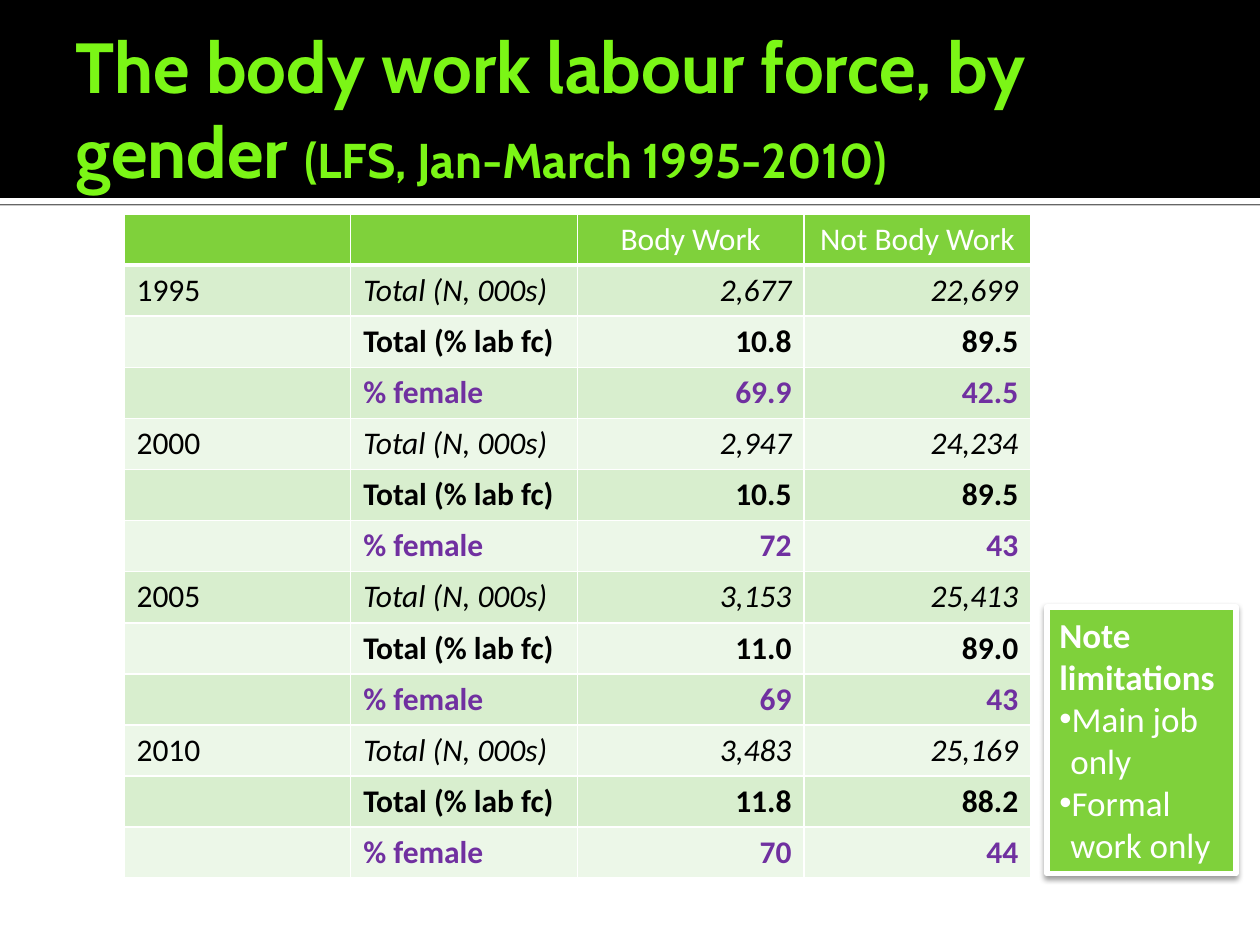
from lxml import etree
from pptx import Presentation
from pptx.dml.color import RGBColor
from pptx.enum.shapes import MSO_SHAPE
from pptx.enum.text import MSO_ANCHOR, MSO_AUTO_SIZE, PP_ALIGN
from pptx.oxml.ns import qn
from pptx.util import Emu, Pt

RECTANGLE = MSO_SHAPE.RECTANGLE
LEFT, CENTER, RIGHT = PP_ALIGN.LEFT, PP_ALIGN.CENTER, PP_ALIGN.RIGHT
MIDDLE, TOP = MSO_ANCHOR.MIDDLE, MSO_ANCHOR.TOP
NO_AUTOFIT = MSO_AUTO_SIZE.NONE
TITLE_ONLY = 5
PX_PER_INCH = 126

COLORS = {
    "white": "FFFFFF", "black": "000000", "title": "7BF616", "green": "7FD13B",
    "band_dark": "D8EECE", "band_light": "ECF7E8", "purple": "7030A0",
}

HEADERS = ["", "", "Body Work", "Not Body Work"]
# Label, colour, bold, italic of each measure
MEASURES = [
    ("Total (N, 000s)", "black", False, True),
    ("Total (% lab fc)", "black", True, False),
    ("% female", "purple", True, False),
]
# For each year, the body work and not body work value of each measure
LABOUR_FORCE = {
    "1995": [("2,677", "22,699"), ("10.8", "89.5"), ("69.9", "42.5")],
    "2000": [("2,947", "24,234"), ("10.5", "89.5"), ("72", "43")],
    "2005": [("3,153", "25,413"), ("11.0", "89.0"), ("69", "43")],
    "2010": [("3,483", "25,169"), ("11.8", "88.2"), ("70", "44")],
}
NOTE_HEADING = "Note limitations"
LIMITATIONS = ["Main job only", "Formal work only"]


def px(length):
    return Emu(round(length * 914400 / PX_PER_INCH))


def rgb(name):
    return RGBColor.from_string(COLORS[name])


def format_text(paragraph, size, color, font="Calibri", bold=False, italic=False, align=LEFT):
    paragraph.alignment = align
    for run in paragraph.runs:
        run.font.name = font
        run.font.size = Pt(size)
        run.font.bold = bold
        run.font.italic = italic
        run.font.color.rgb = rgb(color)


def add_shadow(shape, opacity, blur, distance):
    effects = shape._element.spPr.find(qn("a:effectLst"))
    shadow = etree.SubElement(
        effects, qn("a:outerShdw"), blurRad=str(Pt(blur)), dist=str(Pt(distance)),
        dir="5400000", algn="t", rotWithShape="0")
    tint = etree.SubElement(shadow, qn("a:srgbClr"), val=COLORS["black"])
    etree.SubElement(tint, qn("a:alpha"), val=str(opacity * 1000))


def add_rectangle(slide, left, top, width, height, fill):
    rectangle = slide.shapes.add_shape(RECTANGLE, px(left), px(top), px(width), px(height))
    rectangle.shadow.inherit = False
    rectangle.fill.solid()
    rectangle.fill.fore_color.rgb = rgb(fill)
    rectangle.line.fill.background()
    return rectangle


def add_header(slide, left, top, width, height):
    # White strip with a hard shadow, below the black banner
    strip = add_rectangle(slide, left, top + height, width, 6, "white")
    add_shadow(strip, 60, 0, 0.8)
    add_rectangle(slide, left, top, width, height, "black")

    # Title, brought in front of the banner
    title = slide.shapes.title
    slide.shapes._spTree.append(title._element)
    title.left, title.top = px(left + 63), px(top + 21)
    title.width, title.height = px(width - 126), px(173)
    frame = title.text_frame
    frame.text = "The body work labour force, by gender "
    frame.auto_size = NO_AUTOFIT
    frame.word_wrap = True
    frame.vertical_anchor = MIDDLE
    frame.margin_left = px(13)
    frame.margin_right = frame.margin_top = frame.margin_bottom = px(6)
    heading = frame.paragraphs[0]
    source = heading.add_run()
    source.text = "(LFS, Jan-March 1995-2010)"
    format_text(heading, 40.5, "title", font="Cabin", bold=True)
    source.font.size = Pt(27.9)


def set_borders(cell, bottom_width):
    properties = cell._tc.get_or_add_tcPr()
    widths = {"lnL": 1, "lnR": 1, "lnT": 1, "lnB": bottom_width}
    for position, (side, width) in enumerate(widths.items()):
        border = etree.Element(qn(f"a:{side}"), w=str(Pt(width)))
        fill = etree.SubElement(border, qn("a:solidFill"))
        etree.SubElement(fill, qn("a:srgbClr"), val=COLORS["white"])
        properties.insert(position, border)


def fill_cell(cell, text, fill, color, bottom_width=1, **style):
    cell.fill.solid()
    cell.fill.fore_color.rgb = rgb(fill)
    set_borders(cell, bottom_width)
    paragraph = cell.text_frame.paragraphs[0]
    paragraph.text = text
    paragraph.font.size = Pt(18)
    format_text(paragraph, 18, color, **style)


def add_labour_force_table(slide, left, top, width, height):
    row_count = 1 + len(LABOUR_FORCE) * len(MEASURES)
    table = slide.shapes.add_table(
        row_count, len(HEADERS), px(left), px(top), px(width), px(height)).table
    for column in table.columns:
        column.width = px(width / len(HEADERS))
    for row in table.rows:
        row.height = px(height / row_count)

    # Header row
    for column, header in enumerate(HEADERS):
        fill_cell(table.cell(0, column), header, "green", "white", bottom_width=3, align=CENTER)

    # One row per year and measure, in alternating bands
    row = 1
    for year, figures in LABOUR_FORCE.items():
        for (label, color, bold, italic), values in zip(MEASURES, figures):
            band = "band_dark" if row % 2 else "band_light"
            year_label = year if label == MEASURES[0][0] else ""
            fill_cell(table.cell(row, 0), year_label, band, "black")
            for column, text in enumerate([label, *values], start=1):
                fill_cell(table.cell(row, column), text, band, color, bold=bold,
                          italic=italic, align=LEFT if column == 1 else RIGHT)
            row += 1


def add_bullet(paragraph, indent):
    properties = paragraph._p.get_or_add_pPr()
    properties.set("marL", str(px(indent)))
    properties.set("indent", str(-px(indent)))
    etree.SubElement(properties, qn("a:buFont"), typeface="Arial")
    etree.SubElement(properties, qn("a:buChar"), char="•")


def add_limitations_note(slide, left, top, width, height):
    note = add_rectangle(slide, left, top, width, height, "green")
    note.line.color.rgb = rgb("white")
    note.line.width = Pt(3)
    add_shadow(note, 38, 3.1, 1.6)
    frame = note.text_frame
    frame.word_wrap = True
    frame.vertical_anchor = TOP
    frame.text = NOTE_HEADING
    format_text(frame.paragraphs[0], 20, "white", bold=True)
    for limitation in LIMITATIONS:
        item = frame.add_paragraph()
        item.text = limitation
        format_text(item, 20, "white")
        add_bullet(item, 11)


def main():
    presentation = Presentation()
    presentation.slide_width, presentation.slide_height = px(1260), px(945)
    slide = presentation.slides.add_slide(presentation.slide_layouts[TITLE_ONLY])
    add_header(slide, 0, 0, 1260, 198)
    add_labour_force_table(slide, 124, 214, 907, 664)
    add_limitations_note(slide, 1047, 607, 189, 267)
    presentation.save("out.pptx")


if __name__ == "__main__":
    main()
